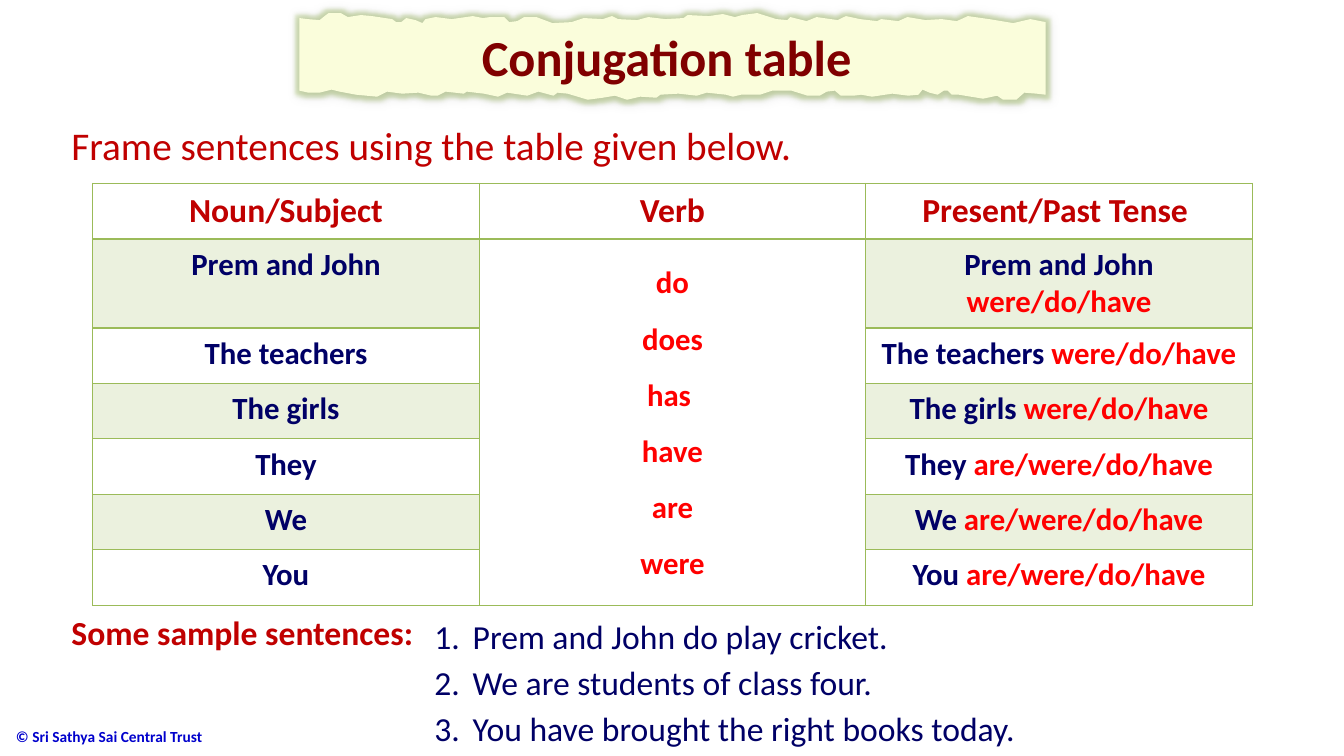
"""Build the conjugation table slide."""
from dataclasses import dataclass

from lxml import etree
from pptx import Presentation
from pptx.dml.color import RGBColor
from pptx.enum.text import MSO_ANCHOR, PP_ALIGN
from pptx.oxml import parse_xml
from pptx.oxml.ns import nsdecls, qn
from pptx.util import Inches, Pt

CENTER = PP_ALIGN.CENTER
LEFT = PP_ALIGN.LEFT
TOP = MSO_ANCHOR.TOP
MIDDLE = MSO_ANCHOR.MIDDLE
FONT = "Calibri"
COLORS = {
    "banner": "FAFDDB", "maroon": "800000", "red": "C00000", "verb": "FF0000",
    "navy": "000066", "blue": "0000CC", "green": "9BBB59", "band": "EBF1DE",
    "white": "FFFFFF",
}
TORN_TOP = (
    (297, 18), (305, 19), (317, 20), (322, 16), (326, 13), (338, 13), (345, 17),
    (358, 15), (369, 16), (382, 18), (389, 19), (393, 22), (398, 22), (403, 18),
    (412, 20), (419, 23), (422, 19), (432, 17), (448, 19), (469, 16), (479, 18),
    (486, 17), (500, 17), (505, 22), (513, 21), (520, 17), (532, 17), (548, 23),
    (567, 22), (579, 18), (598, 19), (607, 16), (613, 19), (632, 20), (643, 17),
    (660, 19), (678, 18), (682, 15), (703, 16), (717, 14), (729, 17), (736, 15),
    (751, 13), (770, 19), (781, 20), (784, 17), (800, 21), (810, 17), (831, 20),
    (839, 16), (853, 19), (870, 21), (874, 19), (891, 21), (900, 17), (918, 20),
    (934, 19), (949, 21), (960, 16), (981, 19), (1005, 23), (1022, 19), (1037, 22),
)
TORN_BOTTOM = (
    (1037, 94), (1028, 93), (1016, 92), (1008, 99), (995, 99), (989, 95), (975, 98),
    (951, 94), (944, 94), (940, 90), (936, 90), (930, 94), (922, 92), (915, 89),
    (911, 94), (901, 95), (885, 93), (865, 96), (854, 94), (847, 95), (834, 95),
    (828, 90), (820, 91), (813, 95), (801, 95), (785, 90), (766, 90), (754, 94),
    (735, 94), (727, 96), (720, 94), (701, 92), (691, 95), (673, 93), (655, 94),
    (651, 97), (635, 96), (622, 99), (610, 95), (598, 97), (583, 99), (563, 93),
    (553, 92), (549, 95), (534, 91), (523, 95), (503, 92), (494, 96), (480, 93),
    (463, 91), (460, 93), (442, 91), (434, 95), (428, 95), (415, 92), (399, 93),
    (384, 91), (374, 96), (353, 94), (337, 91), (329, 89), (317, 92), (306, 92),
    (297, 90),
)
HEADINGS = ("Noun/Subject", "Verb", "Present/Past Tense ")
VERBS = ("do", "does", "has ", "have", "are", "were")
SENTENCES = (
    "Prem and John do play cricket.",
    "We are students of class four.",
    "You have brought the right books today.",
)


@dataclass(frozen=True)
class Conjugation:
    """A subject and the verbs that agree with it."""
    subject: str
    verbs: str
    height: float = 0.55


@dataclass(frozen=True)
class TextBox:
    """A text box with its place and format."""
    box: tuple[float, float, float, float]
    lines: tuple[str, ...]
    size: int
    color: str
    bold: bool = False
    spacing: float = 1.14
    indent: float = 0
    numbered: bool = False
    anchor: MSO_ANCHOR = TOP


CONJUGATIONS = (
    Conjugation("Prem and John", "were/do/have", 0.87),
    Conjugation("The teachers", "were/do/have"),
    Conjugation("The girls", "were/do/have"),
    Conjugation("They", "are/were/do/have"),
    Conjugation("We", "are/were/do/have"),
    Conjugation("You", "are/were/do/have"),
)
TEXT_BOXES = (
    TextBox((-0.44, 7.1, 4.03, 0.41), ("© Sri Sathya Sai Central Trust",), 11, "blue",
            bold=True, spacing=1, indent=0.5, anchor=MIDDLE),
    TextBox((0.61, 5.97, 4.09, 0.54), ("Some sample sentences:",), 24, "red", bold=True),
    TextBox((0.61, 1.09, 7.63, 0.61), ("Frame sentences using the table given below.",),
            28, "red"),
    TextBox((4.21, 6.01, 6.39, 1.44), SENTENCES, 24, "navy", indent=0.38, numbered=True),
)


def rgb(name: str) -> RGBColor:
    """Return the named colour."""
    return RGBColor.from_string(COLORS[name])


def add_text(paragraph, text: str, *, size: int, color: str, bold: bool = True,
             align=CENTER, spacing: float = 1) -> None:
    """Append a formatted run to a paragraph."""
    paragraph.alignment = align
    paragraph.line_spacing = spacing
    run = paragraph.add_run()
    run.text = text
    run.font.name = FONT
    run.font.size = Pt(size)
    run.font.bold = bold
    run.font.color.rgb = rgb(color)


def next_paragraph(frame, index: int):
    """Return the first paragraph of a frame or a new one."""
    return frame.add_paragraph() if index else frame.paragraphs[0]


def add_banner(slide) -> None:
    """Draw the torn paper title banner."""
    outline = TORN_TOP + TORN_BOTTOM
    builder = slide.shapes.build_freeform(*outline[0], scale=Inches(0.01))
    builder.add_line_segments(outline[1:], close=True)
    banner = builder.convert_to_shape()
    banner.fill.solid()
    banner.fill.fore_color.rgb = rgb("banner")
    banner.line.fill.background()
    banner.shadow.inherit = False
    effects = banner.element.spPr.find(qn("a:effectLst"))
    effects.append(parse_xml(
        f'<a:glow {nsdecls("a")} rad="63500"><a:srgbClr val="{COLORS["green"]}">'
        '<a:alpha val="40000"/></a:srgbClr></a:glow>'))
    effects.append(parse_xml(
        f'<a:outerShdw {nsdecls("a")} blurRad="76200" dist="0" dir="18900000">'
        '<a:srgbClr val="000000"><a:alpha val="20000"/></a:srgbClr></a:outerShdw>'))
    frame = banner.text_frame
    frame.vertical_anchor = MIDDLE
    add_text(frame.paragraphs[0], "Conjugation table ", size=36, color="maroon")


def format_cell(cell, fill: str, top: int, bottom: int, anchor) -> None:
    """Set the margins, borders and fill of a cell."""
    cell.margin_left = cell.margin_right = Inches(0.07)
    cell.margin_top = cell.margin_bottom = Inches(0.07)
    cell.vertical_anchor = anchor
    properties = cell._tc.get_or_add_tcPr()
    for side, width in (("L", 1), ("R", 1), ("T", top), ("B", bottom)):
        properties.append(parse_xml(
            f'<a:ln{side} {nsdecls("a")} w="{Pt(width)}"><a:solidFill>'
            f'<a:srgbClr val="{COLORS["green"]}"/></a:solidFill></a:ln{side}>'))
    cell.fill.solid()
    cell.fill.fore_color.rgb = rgb(fill)


def add_conjugation_table(slide) -> None:
    """Draw the table of subjects, verbs and tenses."""
    heights = [0.55] + [entry.height for entry in CONJUGATIONS]
    table = slide.shapes.add_table(
        len(heights), len(HEADINGS), Inches(0.92), Inches(1.82),
        Inches(11.5), Inches(sum(heights))).table
    table.first_row = table.horz_banding = False
    for row, height in enumerate(heights):
        table.rows[row].height = Inches(height)
        for column in range(len(HEADINGS)):
            fill = "band" if row % 2 and column != 1 else "white"
            format_cell(table.cell(row, column), fill, 2 if row == 1 else 1,
                        1 if row else 2, TOP if row else MIDDLE)
    for column, heading in enumerate(HEADINGS):
        add_text(table.cell(0, column).text_frame.paragraphs[0], heading,
                 size=24, color="red")
    for row, entry in enumerate(CONJUGATIONS, start=1):
        add_text(table.cell(row, 0).text_frame.paragraphs[0], entry.subject,
                 size=22, color="navy")
        tense = table.cell(row, 2).text_frame.paragraphs[0]
        add_text(tense, entry.subject + " ", size=22, color="navy")
        add_text(tense, entry.verbs, size=22, color="verb")
    verb_cell = table.cell(1, 1)
    verb_cell.merge(table.cell(len(CONJUGATIONS), 1))
    for index, verb in enumerate(VERBS):
        add_text(next_paragraph(verb_cell.text_frame, index), verb,
                 size=22, color="verb", spacing=1.5)


def add_text_box(slide, item: TextBox) -> None:
    """Draw a text box, numbered if asked."""
    frame = slide.shapes.add_textbox(*map(Inches, item.box)).text_frame
    frame.word_wrap = True
    frame.vertical_anchor = item.anchor
    for index, line in enumerate(item.lines):
        paragraph = next_paragraph(frame, index)
        properties = paragraph._p.get_or_add_pPr()
        properties.set("marL", str(Inches(item.indent)))
        if item.numbered:
            properties.set("indent", str(-Inches(item.indent)))
            etree.SubElement(properties, qn("a:buFont"), typeface="+mj-lt")
            etree.SubElement(properties, qn("a:buAutoNum"), type="arabicPeriod")
        add_text(paragraph, line, size=item.size, color=item.color, bold=item.bold,
                 align=LEFT, spacing=item.spacing)


def main() -> None:
    """Build and save the presentation."""
    presentation = Presentation()
    presentation.slide_width = Inches(13.33)
    presentation.slide_height = Inches(7.5)
    slide = presentation.slides.add_slide(presentation.slide_layouts[6])
    add_banner(slide)
    add_conjugation_table(slide)
    for item in TEXT_BOXES:
        add_text_box(slide, item)
    presentation.save("out.pptx")


if __name__ == "__main__":
    main()
